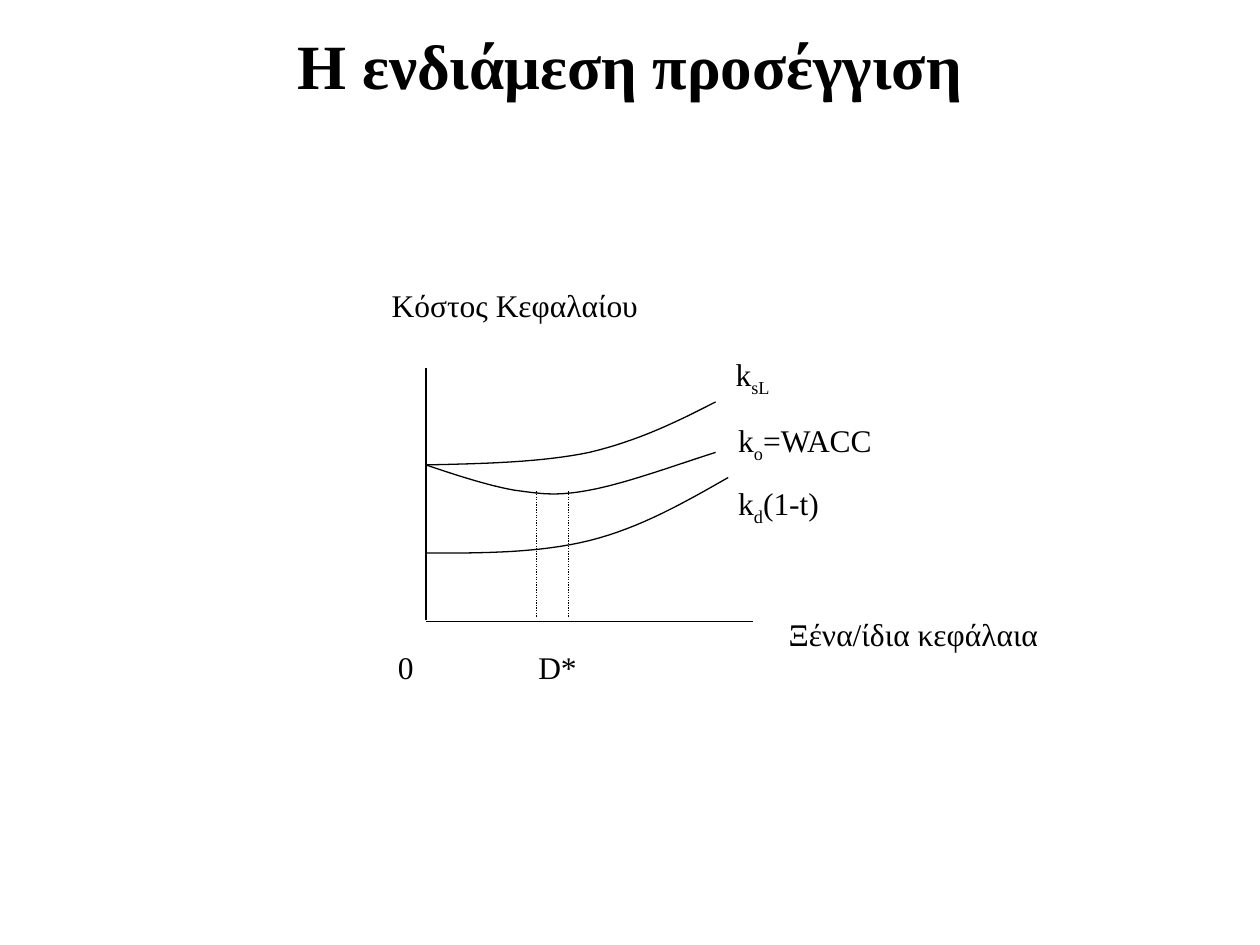
from lxml.etree import SubElement
from pptx import Presentation
from pptx.dml.color import RGBColor
from pptx.enum.dml import MSO_LINE_DASH_STYLE as Dash
from pptx.enum.shapes import MSO_CONNECTOR as Connector
from pptx.enum.text import PP_ALIGN as Align
from pptx.oxml.ns import qn
from pptx.util import Inches, Pt

THEME = {
    "font": "Times New Roman",
    "ink": RGBColor(0, 0, 0),
    "title": 36,
    "label": 18,
    "subscript": "-25000",
    "line": 0.75,
}

TITLE = "Η ενδιάμεση προσέγγιση"
LABELS = [
    (["Κόστος Κεφαλαίου"], (3.01, 2.22, 2.18, 0.4), Align.LEFT),
    (["k", "sL"], (5.74, 2.77, 0.56, 0.3), Align.LEFT),
    (["k", "o", "=WACC"], (5.76, 3.29, 1.32, 0.43), Align.LEFT),
    (["k", "d", "(1-t)"], (5.76, 3.79, 1.09, 0.4), Align.LEFT),
    (["Ξένα/ίδια κεφάλαια"], (6.16, 4.83, 2.49, 0.36), Align.LEFT),
    (["0"], (3.06, 5.09, 0.44, 0.36), Align.LEFT),
    (["D*"], (4.09, 5.09, 0.67, 0.3), Align.CENTER),
]

ORIGIN_X, AXIS_Y = 3.38, 4.93
AXES = [
    ((ORIGIN_X, AXIS_Y), (5.98, AXIS_Y)),
    ((ORIGIN_X, 2.92), (ORIGIN_X, 4.92)),
]
OPTIMUM_RANGE = [4.26, 4.51]
OPTIMUM_TOP, OPTIMUM_BOTTOM = 3.9, 4.9

COST_CURVES = {
    "debt": [(ORIGIN_X, 4.39), (3.83, 4.39), (4.28, 4.39), (4.68, 4.29),
             (5.08, 4.19), (5.43, 3.99), (5.78, 3.79)],
    "wacc": [(ORIGIN_X, 3.69), (3.62, 3.77), (3.86, 3.85), (4.08, 3.89),
             (4.3, 3.92), (4.41, 3.94), (4.68, 3.89),
             (4.95, 3.84), (5.31, 3.71), (5.68, 3.59)],
    "equity": [(ORIGIN_X, 3.69), (3.84, 3.68), (4.3, 3.67), (4.68, 3.59),
               (5.06, 3.5), (5.37, 3.35), (5.68, 3.19)],
}
STEPS = 16


def add_text(slide, pieces, place, *, size, bold=False, align=Align.LEFT):
    """Add a text box in which every second piece is a subscript."""
    box = slide.shapes.add_textbox(*map(Inches, place))
    frame = box.text_frame
    frame.word_wrap = True
    paragraph = frame.paragraphs[0]
    paragraph.alignment = align
    for index, piece in enumerate(pieces):
        run = paragraph.add_run()
        run.text = piece
        run.font.name = THEME["font"]
        run.font.size = Pt(size)
        run.font.bold = bold
        run.font.color.rgb = THEME["ink"]
        if index % 2:
            run.font._element.set("baseline", THEME["subscript"])


def style_line(line, dash=None):
    """Give a line the theme colour and width."""
    line.color.rgb = THEME["ink"]
    line.width = Pt(THEME["line"])
    if dash:
        line.dash_style = dash


def add_line(slide, start, end, dash=None):
    """Add a straight line without a shadow."""
    connector = slide.shapes.add_connector(
        Connector.STRAIGHT, *map(Inches, start + end))
    style_line(connector.line, dash)
    SubElement(connector._element.spPr, qn("a:effectLst"))


def bezier(controls, t):
    """Return the point at t on a cubic curve."""
    weights = ((1 - t) ** 3, 3 * t * (1 - t) ** 2, 3 * t ** 2 * (1 - t), t ** 3)
    return tuple(sum(w * c for w, c in zip(weights, axis)) for axis in zip(*controls))


def add_curve(slide, controls):
    """Add an open outline through joined cubic curves."""
    points = [bezier(controls[first:first + 4], step / STEPS)
              for first in range(0, len(controls) - 1, 3)
              for step in range(1, STEPS + 1)]
    builder = slide.shapes.build_freeform(*map(Inches, controls[0]))
    builder.add_line_segments(
        [(Inches(x), Inches(y)) for x, y in points], close=False)
    curve = builder.convert_to_shape()
    curve.fill.background()
    curve.shadow.inherit = False
    style_line(curve.line)


def main():
    """Build the slide and save it."""
    deck = Presentation()
    deck.slide_width, deck.slide_height = Inches(10), Inches(7.5)
    slide = deck.slides.add_slide(deck.slide_layouts[6])
    add_text(slide, [TITLE], (0, 0.16, 10, 0.55), size=THEME["title"],
             bold=True, align=Align.CENTER)
    for start, end in AXES:
        add_line(slide, start, end)
    for pieces, place, align in LABELS:
        add_text(slide, pieces, place, size=THEME["label"], align=align)
    for controls in COST_CURVES.values():
        add_curve(slide, controls)
    for x in OPTIMUM_RANGE:
        add_line(slide, (x, OPTIMUM_TOP), (x, OPTIMUM_BOTTOM), Dash.ROUND_DOT)
    deck.save("out.pptx")


if __name__ == "__main__":
    main()
